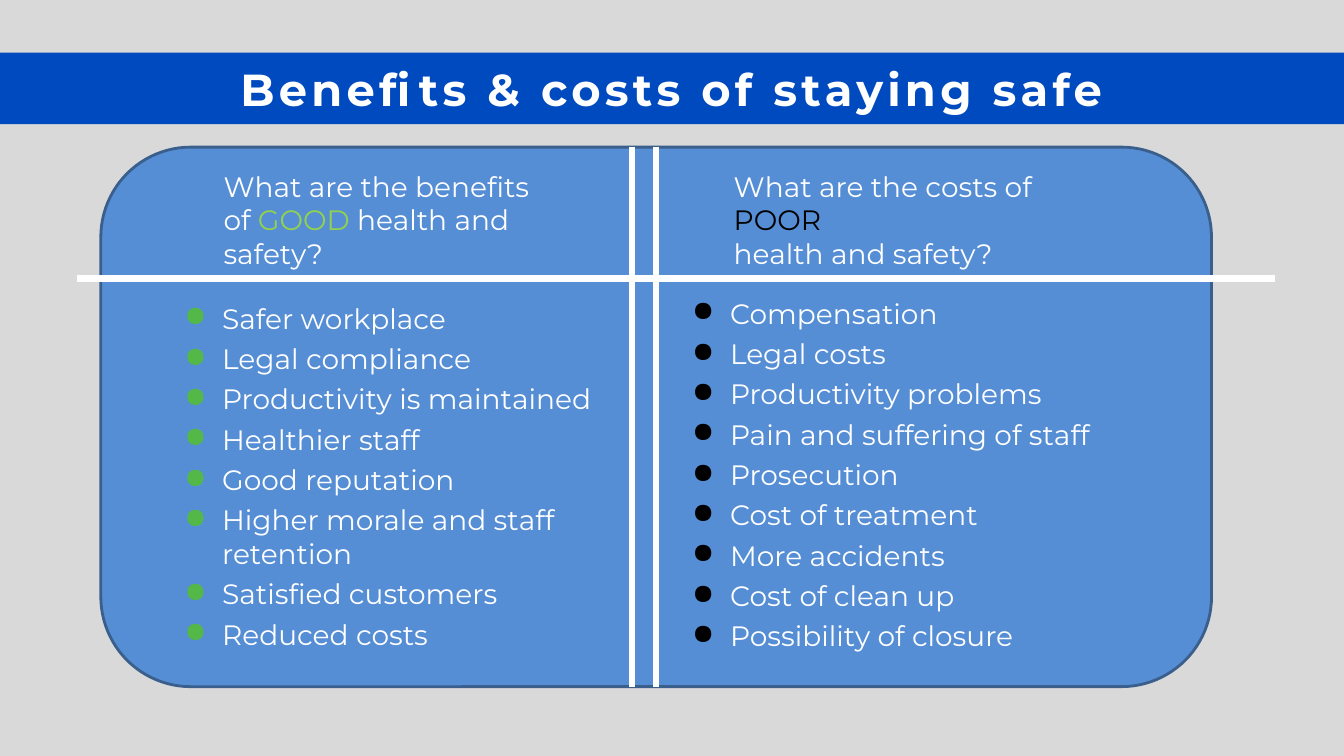
from dataclasses import dataclass

from lxml.etree import SubElement as Sub
from pptx import Presentation
from pptx.dml.color import RGBColor as RGB
from pptx.enum.shapes import MSO_CONNECTOR as Connector, MSO_SHAPE as Preset
from pptx.enum.text import MSO_ANCHOR as Anchor, PP_ALIGN as Align
from pptx.oxml.ns import qn
from pptx.util import Pt


@dataclass(frozen=True)
class Theme:
    font: str = "Montserrat"
    backdrop: RGB = RGB(0xD9, 0xD9, 0xD9)
    panel: RGB = RGB(0x55, 0x8E, 0xD5)
    panel_edge: RGB = RGB(0x3A, 0x5F, 0x8C)
    banner: RGB = RGB(0x00, 0x4A, 0xBF)
    white: RGB = RGB(0xFF, 0xFF, 0xFF)
    lime: RGB = RGB(0x92, 0xD0, 0x50)
    green: RGB = RGB(0x53, 0xB8, 0x48)
    black: RGB = RGB(0x00, 0x00, 0x00)
    title_size: int = 32
    body_size: int = 20


THEME = Theme()


@dataclass(frozen=True)
class Box:
    left: float
    top: float
    width: float
    height: float

    def lengths(self) -> list:
        return [Pt(v) for v in (self.left, self.top, self.width, self.height)]


@dataclass(frozen=True)
class Span:
    text: str
    color: RGB = THEME.white


@dataclass(frozen=True)
class Column:
    question_box: Box
    question: tuple  # paragraphs, each a tuple of spans
    points_box: Box
    points: tuple
    bullet: RGB


@dataclass(frozen=True)
class Rule:
    x1: float
    y1: float
    x2: float
    y2: float


def apply_format(target, values: dict) -> None:
    for name, value in values.items():
        setattr(target, name, value)


def add_span(paragraph, span: Span, size: int = THEME.body_size, bold: bool = False):
    run = paragraph.add_run()
    run.text = span.text
    apply_format(run.font, {"name": THEME.font, "size": Pt(size), "bold": bold})
    run.font.color.rgb = span.color
    return run


def add_panel(slide, preset, box: Box, fill: RGB):
    panel = slide.shapes.add_shape(preset, *box.lengths())
    panel.shadow.inherit = False
    panel.fill.solid()
    panel.fill.fore_color.rgb = fill
    panel.line.fill.background()
    return panel


def add_paragraphs(slide, box: Box, count: int) -> list:
    frame = slide.shapes.add_textbox(*box.lengths()).text_frame
    frame.word_wrap = True
    return [frame.paragraphs[0]] + [frame.add_paragraph() for _ in range(count - 1)]


def add_bullet(paragraph, color: RGB) -> None:
    props = paragraph._p.get_or_add_pPr()
    props.set("marL", str(Pt(27)))
    props.set("indent", str(Pt(-27)))
    Sub(Sub(props, qn("a:buClr")), qn("a:srgbClr")).set("val", str(color))
    Sub(props, qn("a:buChar")).set("char", "●")


def add_column(slide, column: Column) -> None:
    lines = add_paragraphs(slide, column.question_box, len(column.question))
    for line, spans in zip(lines, column.question):
        for span in spans:
            add_span(line, span)
    items = add_paragraphs(slide, column.points_box, len(column.points))
    for index, (item, point) in enumerate(zip(items, column.points)):
        add_bullet(item, column.bullet)
        if index:
            item.space_before = Pt(4.8)
        add_span(item, Span(point))


def add_rule(slide, rule: Rule) -> None:
    ends = [Pt(v) for v in (rule.x1, rule.y1, rule.x2, rule.y2)]
    divider = slide.shapes.add_connector(Connector.STRAIGHT, *ends)
    divider.line.color.rgb = THEME.white
    divider.line.width = Pt(4.5)
    Sub(divider._element.spPr, qn("a:effectLst"))


BENEFITS = Column(
    Box(152.6, 117.4, 249.8, 80),
    ((Span("What are the benefits of "), Span("GOOD ", THEME.lime),
      Span("health and safety?")),),
    Box(124.6, 211.7, 311.8, 260.6),
    ("Safer workplace", "Legal compliance", "Productivity is maintained",
     "Healthier staff", "Good reputation", "Higher morale and staff retention",
     "Satisfied customers", "Reduced costs"),
    THEME.green,
)
COSTS = Column(
    Box(517, 117.4, 250.6, 80),
    ((Span("What are the costs of "), Span("POOR", THEME.black)),
     (Span("health and safety?"),)),
    Box(487.4, 208.1, 309.6, 265.7),
    ("Compensation", "Legal costs", "Productivity problems",
     "Pain and suffering of staff", "Prosecution", "Cost of treatment",
     "More accidents", "Cost of clean up", "Possibility of closure"),
    THEME.black,
)
PANEL = Box(72, 105.1, 793.4, 385.4)
PANEL_BOTTOM = PANEL.top + PANEL.height
RULES = [Rule(x, PANEL.top, x, PANEL_BOTTOM) for x in (451.4, 468.7)]
RULES.append(Rule(54.7, 198.9, 910.8, 198.9))


def main() -> None:
    deck = Presentation()
    apply_format(deck, {"slide_width": Pt(960), "slide_height": Pt(540)})
    slide = deck.slides.add_slide(deck.slide_layouts[6])
    slide.background.fill.solid()
    slide.background.fill.fore_color.rgb = THEME.backdrop

    # Rounded panel behind both columns
    panel = add_panel(slide, Preset.ROUNDED_RECTANGLE, PANEL, THEME.panel)
    panel.line.color.rgb = THEME.panel_edge
    panel.line.width = Pt(2)

    # Title banner
    banner = add_panel(slide, Preset.RECTANGLE, Box(0, 37.5, 960, 51.1), THEME.banner)
    apply_format(banner.text_frame, {"word_wrap": True, "vertical_anchor": Anchor.MIDDLE})
    heading = banner.text_frame.paragraphs[0]
    heading.alignment = Align.CENTER
    title = add_span(heading, Span("Benefits & costs of staying safe"),
                     THEME.title_size, bold=True)
    title._r.get_or_add_rPr().set("spc", "300")

    # Questions and their answers
    for column in (BENEFITS, COSTS):
        add_column(slide, column)

    # Dividing lines
    for rule in RULES:
        add_rule(slide, rule)

    deck.save("out.pptx")


if __name__ == "__main__":
    main()
